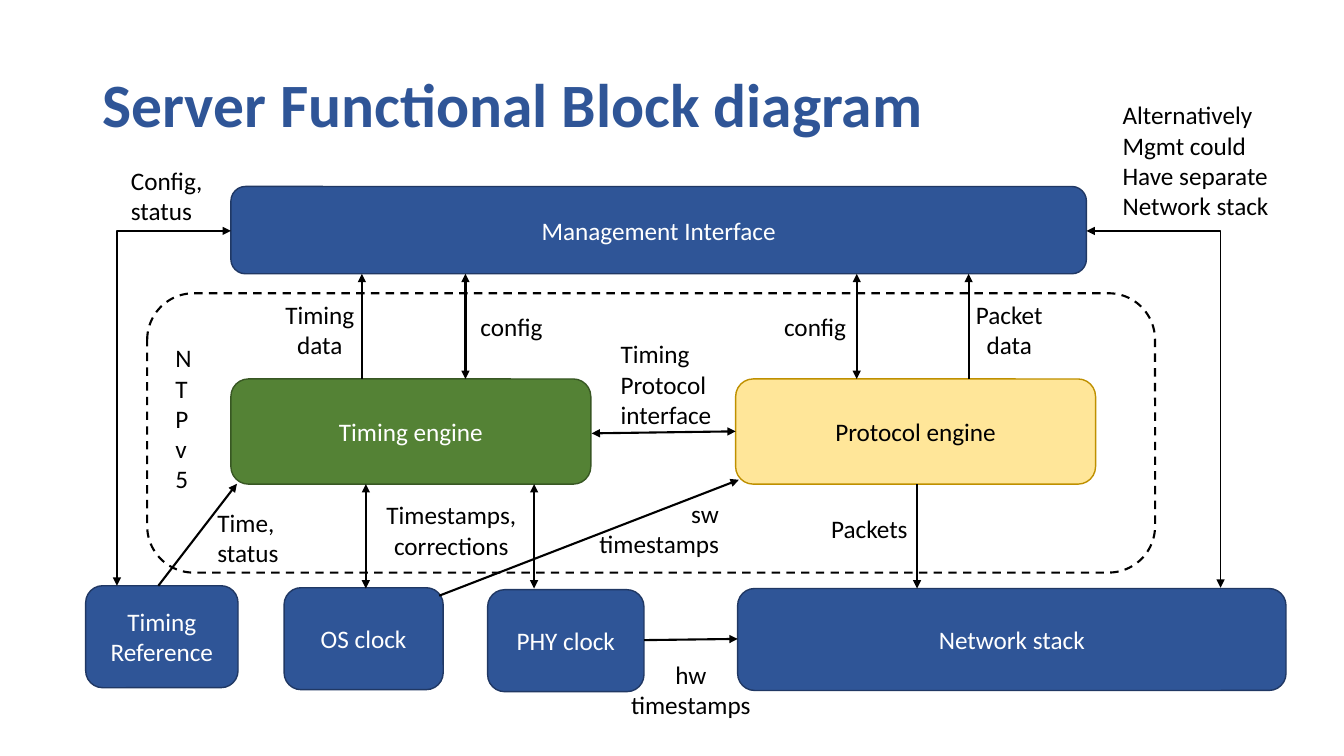
from dataclasses import dataclass

from lxml.etree import SubElement
from pptx import Presentation
from pptx.dml.color import RGBColor
from pptx.enum.dml import MSO_LINE
from pptx.enum.shapes import MSO_CONNECTOR, MSO_SHAPE
from pptx.enum.text import MSO_ANCHOR, MSO_AUTO_SIZE, PP_ALIGN
from pptx.oxml.ns import qn
from pptx.slide import Slide
from pptx.text.text import TextFrame
from pptx.util import Cm, Pt

FONT = "Calibri"
BLUE, NAVY, BLACK, WHITE = "2F5597", "203864", "000000", "FFFFFF"
LEFT, CENTER, RIGHT = PP_ALIGN.LEFT, PP_ALIGN.CENTER, PP_ALIGN.RIGHT

# Edges between the rows of blocks, in centimetres
MANAGEMENT_BOTTOM, ENGINE_TOP = 6.9, 9.55
ENGINE_BOTTOM, CLOCK_TOP = 12.2, 14.83


@dataclass
class Block:
    text: str
    left: float
    top: float
    width: float
    height: float
    fill: str = BLUE
    outline: str = NAVY
    color: str = WHITE


@dataclass
class Arrow:
    start: tuple[float, float]
    end: tuple[float, float]
    double: bool = False
    bent: bool = False


@dataclass
class Label:
    text: str
    left: float
    top: float
    width: float
    align: PP_ALIGN = LEFT
    wrapped_lines: int = 0


BLOCKS = [
    Block("Management Interface", 5.82, 4.7, 21.56, 2.2),
    Block("Timing engine", 5.82, ENGINE_TOP, 9.07, 2.65, "548235", "385723"),
    Block("Protocol engine", 18.54, ENGINE_TOP, 9.07, 2.65, "FFE699", "BF9000", BLACK),
    Block("Timing\nReference", 2.16, 14.76, 3.84, 2.57),
    Block("OS clock", 7.16, 14.81, 4.01, 2.57),
    Block("PHY clock", 12.29, 14.86, 3.94, 2.57),
    Block("Network stack", 18.59, 14.83, 13.82, 2.57),
]


def upper_arrow(x: float, double: bool = False) -> Arrow:
    return Arrow((x, ENGINE_TOP), (x, MANAGEMENT_BOTTOM), double)


def lower_arrow(x: float, double: bool = False) -> Arrow:
    return Arrow((x, ENGINE_BOTTOM), (x, CLOCK_TOP), double)


ARROWS = [
    upper_arrow(9.12),
    upper_arrow(11.73, double=True),
    upper_arrow(21.59, double=True),
    upper_arrow(24.41),
    lower_arrow(9.22, double=True),
    lower_arrow(13.46, double=True),
    lower_arrow(23.11),
    Arrow((14.91, 10.92), (18.54, 10.87), double=True),
    Arrow((3.99, 14.76), (5.97, 12.19)),
    Arrow((11.07, 15.01), (18.62, 12.09)),
    Arrow((16.23, 16.13), (18.59, 16.1)),
    Arrow((27.38, 5.82), (30.76, 14.81), double=True, bent=True),
    Arrow((5.82, 5.82), (2.95, 14.76), double=True, bent=True),
]

LABELS = [
    Label("Config,\nstatus", 3.05, 4.04, 2.34),
    Label("Alternatively\nMgmt could\nHave separate\nNetwork stack", 28.04, 2.39, 4.22),
    Label("Timing\ndata", 6.93, 7.42, 2.26, CENTER),
    Label("config", 11.86, 7.72, 2.11),
    Label("config", 19.51, 7.72, 2.11),
    Label("Packet\ndata", 24.33, 7.42, 2.21, CENTER),
    Label("NTPv5", 4.17, 8.51, 1.07, wrapped_lines=5),
    Label("Timing\nProtocol\ninterface", 15.39, 8.41, 2.82),
    Label("Time,\nstatus", 5.23, 12.65, 2.06),
    Label("Timestamps,\ncorrections", 9.47, 12.47, 3.81, CENTER),
    Label("sw\ntimestamps", 14.81, 12.42, 3.56, RIGHT),
    Label("Packets", 20.68, 12.8, 2.46, CENTER),
    Label("hw\ntimestamps", 15.62, 16.48, 3.58, CENTER),
]


def rgb(color: str) -> RGBColor:
    return RGBColor.from_string(color)


def write_text(frame: TextFrame, text: str, color: str, align: PP_ALIGN,
               size: int = 18, bold: bool = False) -> None:
    for index, line in enumerate(text.split("\n")):
        para = frame.add_paragraph() if index else frame.paragraphs[0]
        para.alignment = align
        span = para.add_run()
        span.text = line
        span.font.name = FONT
        span.font.size = Pt(size)
        span.font.bold = bold
        span.font.color.rgb = rgb(color)


def draw_title(page: Slide, text: str) -> None:
    title = page.shapes.title
    title.left, title.top, title.width, title.height = Cm(2.33), Cm(0.86), Cm(29.21), Cm(3.68)
    title.text_frame.vertical_anchor = MSO_ANCHOR.MIDDLE
    write_text(title.text_frame, text, BLUE, LEFT, size=44, bold=True)
    title.text_frame.paragraphs[0].line_spacing = 0.9


def draw_frame(page: Slide) -> None:
    box = page.shapes.add_shape(MSO_SHAPE.ROUNDED_RECTANGLE, Cm(3.71), Cm(7.39), Cm(25.4), Cm(7.04))
    box.shadow.inherit = False
    box.fill.background()
    box.line.color.rgb = rgb(BLACK)
    box.line.width = Pt(1.5)
    box.line.dash_style = MSO_LINE.DASH


def draw_block(page: Slide, block: Block) -> None:
    box = page.shapes.add_shape(MSO_SHAPE.ROUNDED_RECTANGLE, Cm(block.left), Cm(block.top),
                                Cm(block.width), Cm(block.height))
    box.shadow.inherit = False
    box.fill.solid()
    box.fill.fore_color.rgb = rgb(block.fill)
    box.line.color.rgb = rgb(block.outline)
    box.line.width = Pt(1)
    box.text_frame.word_wrap = True
    box.text_frame.vertical_anchor = MSO_ANCHOR.MIDDLE
    write_text(box.text_frame, block.text, block.color, CENTER)


def draw_arrow(page: Slide, arrow: Arrow) -> None:
    kind = MSO_CONNECTOR.ELBOW if arrow.bent else MSO_CONNECTOR.STRAIGHT
    connector = page.shapes.add_connector(kind, *(Cm(value) for value in arrow.start + arrow.end))
    connector.line.color.rgb = rgb(BLACK)
    connector.line.width = Pt(1.25 if arrow.bent else 1.5)
    properties = connector._element.spPr
    if arrow.bent:
        # One corner instead of two
        properties.find(qn("a:prstGeom")).set("prst", "bentConnector2")
    outline = properties.find(qn("a:ln"))
    for tip in ["a:headEnd", "a:tailEnd"] if arrow.double else ["a:tailEnd"]:
        SubElement(outline, qn(tip), type="triangle")
    SubElement(properties, qn("a:effectLst"))


def draw_label(page: Slide, label: Label) -> None:
    lines = label.wrapped_lines or label.text.count("\n") + 1
    box = page.shapes.add_textbox(Cm(label.left), Cm(label.top),
                                  Cm(label.width), Cm(0.25 + 0.77 * lines))
    box.text_frame.word_wrap = label.wrapped_lines > 0
    box.text_frame.auto_size = MSO_AUTO_SIZE.SHAPE_TO_FIT_TEXT
    write_text(box.text_frame, label.text, BLACK, label.align)


def main() -> None:
    deck = Presentation()
    deck.slide_width, deck.slide_height = Cm(33.87), Cm(19.05)
    page = deck.slides.add_slide(deck.slide_layouts[5])

    draw_title(page, "Server Functional Block diagram")
    draw_frame(page)
    for block in BLOCKS:
        draw_block(page, block)
    for arrow in ARROWS:
        draw_arrow(page, arrow)
    for label in LABELS:
        draw_label(page, label)

    deck.save("out.pptx")


if __name__ == "__main__":
    main()
